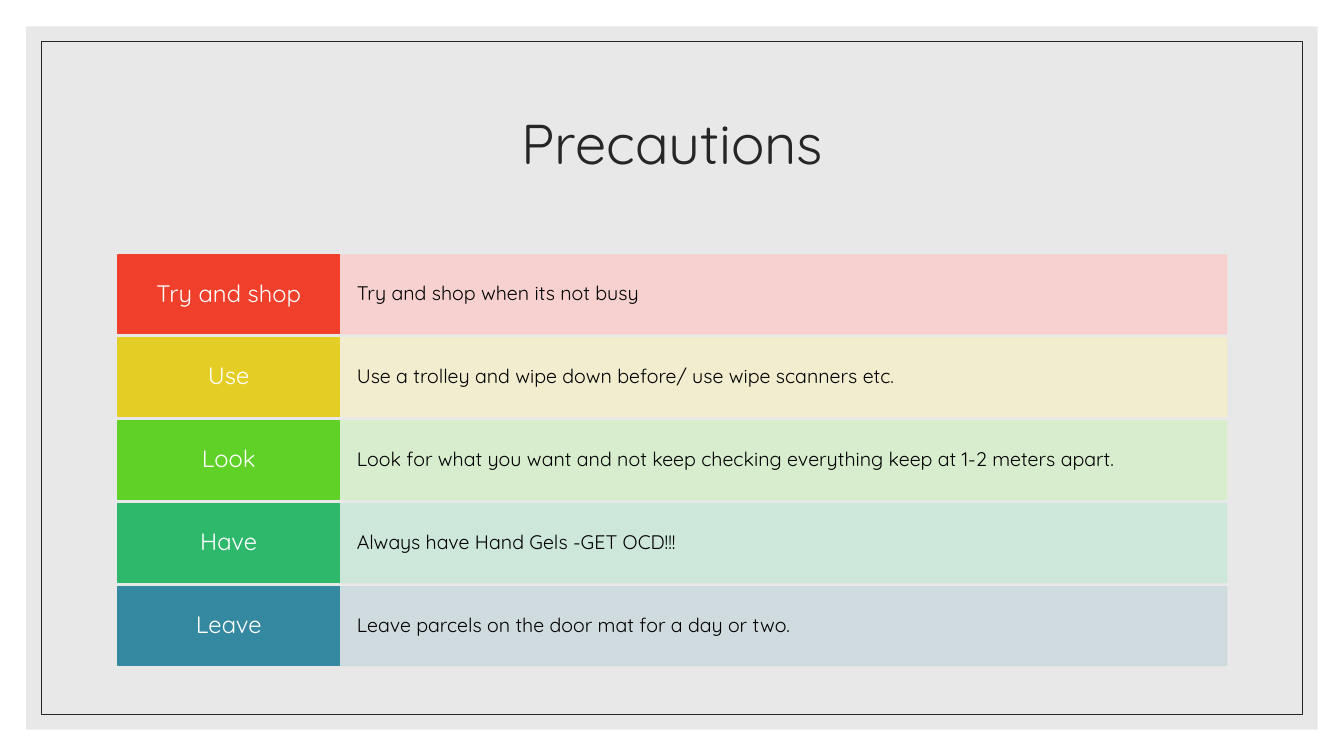
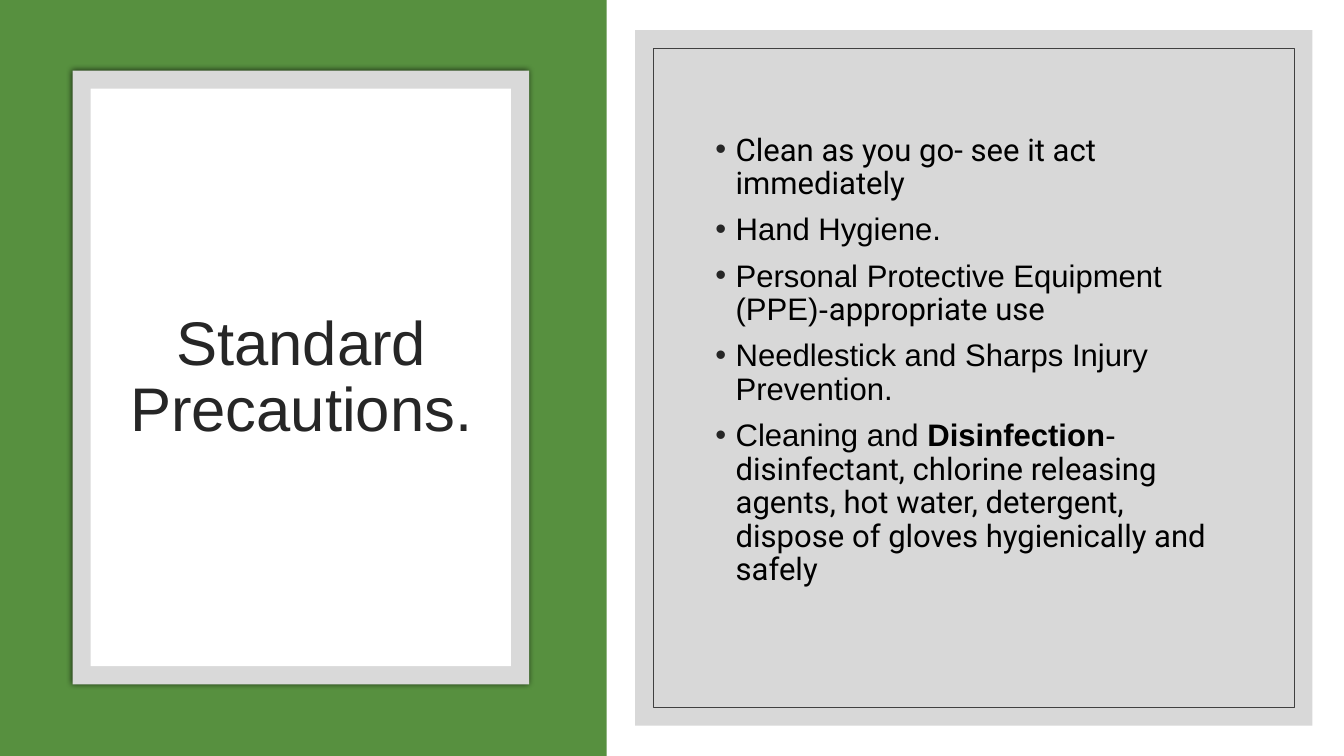
from pptx import Presentation
from pptx.dml.color import RGBColor
from pptx.enum.shapes import MSO_SHAPE
from pptx.enum.text import MSO_ANCHOR, PP_ALIGN
from pptx.oxml import parse_xml
from pptx.oxml.ns import nsdecls
from pptx.util import Inches, Pt
from lxml import etree

C = {
    "white": "FFFFFF", "black": "000000", "ink": "262626", "rule": "404040",
    "light": "D9D9D9", "mid": "BFBFBF", "green": "57903F",
}
A = "{http://schemas.openxmlformats.org/drawingml/2006/main}"

prs = Presentation()
prs.slide_width, prs.slide_height = Inches(13.333), Inches(7.5)
col, row = prs.slide_width / 100, prs.slide_height / 100  # one percent of each side


def rect(s, box, fill=None, line=None, weight=0.5, alpha=100):
    """Add a rectangle; box is left, top, width, height in percent of the slide."""
    x, y, w, h = box
    sp = s.shapes.add_shape(MSO_SHAPE.RECTANGLE, int(x * col), int(y * row),
                            int(w * col), int(h * row))
    sp.shadow.inherit = False
    if fill:
        sp.fill.solid()
        sp.fill.fore_color.rgb = RGBColor.from_string(fill)
    else:
        sp.fill.background()
    if line:
        sp.line.color.rgb = RGBColor.from_string(line)
        sp.line.width = Pt(weight)
    else:
        sp.line.fill.background()
    if alpha < 100:
        for color in sp._element.spPr.iter(A + "srgbClr"):
            etree.SubElement(color, A + "alpha").set("val", str(alpha * 1000))
    return sp


def write(sp, paragraphs, size, color, font, align=PP_ALIGN.CENTER, inset=(0.1, 0.05)):
    """Fill a shape with paragraphs, each a list of (text, font or None, bold) runs."""
    tf = sp.text_frame
    tf.word_wrap = True
    tf.vertical_anchor = MSO_ANCHOR.MIDDLE
    tf.margin_left = tf.margin_right = Inches(inset[0])
    tf.margin_top = tf.margin_bottom = Inches(inset[1])
    for i, runs in enumerate(paragraphs):
        p = tf.add_paragraph() if i else tf.paragraphs[0]
        p.alignment = align
        p.line_spacing = 0.9
        for text, face, bold in runs:
            r = p.add_run()
            r.text = text
            r.font.name = face or font
            r.font.size = Pt(size)
            r.font.bold = bold
            r.font.color.rgb = RGBColor.from_string(color)


# Slide 1: labelled rows
s = prs.slides.add_slide(prs.slide_layouts[6])
rect(s, (1.95, 3.5, 96.1, 93), C["light"], alpha=60)
rect(s, (3.1, 5.5, 93.8, 89), line=C["ink"])
title = rect(s, (8.77, 9.33, 82.5, 20))
write(title, [[("Precautions", None, False)]], 40, C["ink"], "Quicksand")

precautions = [
    ("Try and shop", "Try and shop when its not busy", "F03F2B", "F9CFCD"),
    ("Use", "Use a trolley and wipe down before/ use wipe scanners etc.", "E4CD25", "F4EECC"),
    ("Look", "Look for what you want and not keep checking everything keep at 1-2 meters apart.",
     "60D127", "D7EECC"),
    ("Have", "Always have Hand Gels -GET OCD!!!", "2EB86B", "CCE7DA"),
    ("Leave", "Leave parcels on the door mat for a day or two.", "3488A0", "CEDADF"),
]
left, label_w, bar_w = 8.77, 16.5, 66
top, pitch, bar_h = 33.73, 10.97, 10.4
for i, (label, advice, strong, pale) in enumerate(precautions):
    y = top + i * pitch
    bar = rect(s, (left + label_w, y, bar_w, bar_h), pale, pale, 1, 90)
    write(bar, [[(advice, None, False)]], 14, C["black"], "Quicksand",
          PP_ALIGN.LEFT, (0.17, 0.2))
    tag = rect(s, (left, y, label_w, bar_h), strong, strong, 1)
    write(tag, [[(label, None, False)]], 17, C["white"], "Quicksand", inset=(0.12, 0.08))

# Slide 2: title card and bullet panel
s = prs.slides.add_slide(prs.slide_layouts[6])
rect(s, (0, 0, 45.15, 100), C["green"])
gap_x, gap_y = 1.35, 2.4
panels = [
    ((5.4, 9.33, 33.97, 81.2), C["light"], 100, C["white"], None),
    ((47.25, 4, 50.4, 92), C["mid"], 60, None, C["rule"]),
]
for (x, y, w, h), fill, alpha, inner_fill, inner_line in panels:
    panel = rect(s, (x, y, w, h), fill, alpha=alpha)
    rect(s, (x + gap_x, y + gap_y, w - 2 * gap_x, h - 2 * gap_y), inner_fill, inner_line)
    if inner_fill:
        effects = panel._element.spPr.find(A + "effectLst")
        effects.append(parse_xml(
            f'<a:outerShdw {nsdecls("a")} blurRad="{Pt(4)}" dist="0" dir="0">'
            f'<a:srgbClr val="{C["black"]}"><a:alpha val="66000"/></a:srgbClr></a:outerShdw>'))

title = rect(s, (8.1, 17.33, 28.65, 65.47))
write(title, [[("Standard Precautions.", None, False)]], 44, C["ink"], "Arial")

bullets = [
    [("Clean as you go- see it act immediately", "Roboto", False)],
    [("Hand Hygiene.", None, False)],
    [("Personal Protective Equipment (PPE)-", None, False), ("appropriate use", "Roboto", False)],
    [("Needlestick and Sharps Injury Prevention.", None, False)],
    [("Cleaning and ", None, False), ("Disinfection", None, True), ("-", None, False),
     (" disinfectant, chlorine releasing agents, hot water, detergent, "
      "dispose of gloves hygienically and safely", "Roboto", False)],
]
body = rect(s, (52.5, 13.6, 40, 68.27))
write(body, bullets, 22.2, C["black"], "Arial", PP_ALIGN.LEFT)
for p in body.text_frame.paragraphs:
    p.space_before = Pt(9)
    pPr = p._p.get_or_add_pPr()
    pPr.set("marL", str(Inches(0.2)))
    pPr.set("indent", str(-Inches(0.2)))
    color = etree.SubElement(pPr, A + "buClr")
    etree.SubElement(color, A + "srgbClr").set("val", C["ink"])
    etree.SubElement(pPr, A + "buFont").set("typeface", "Arial")
    etree.SubElement(pPr, A + "buChar").set("char", "•")

prs.save("out.pptx")
